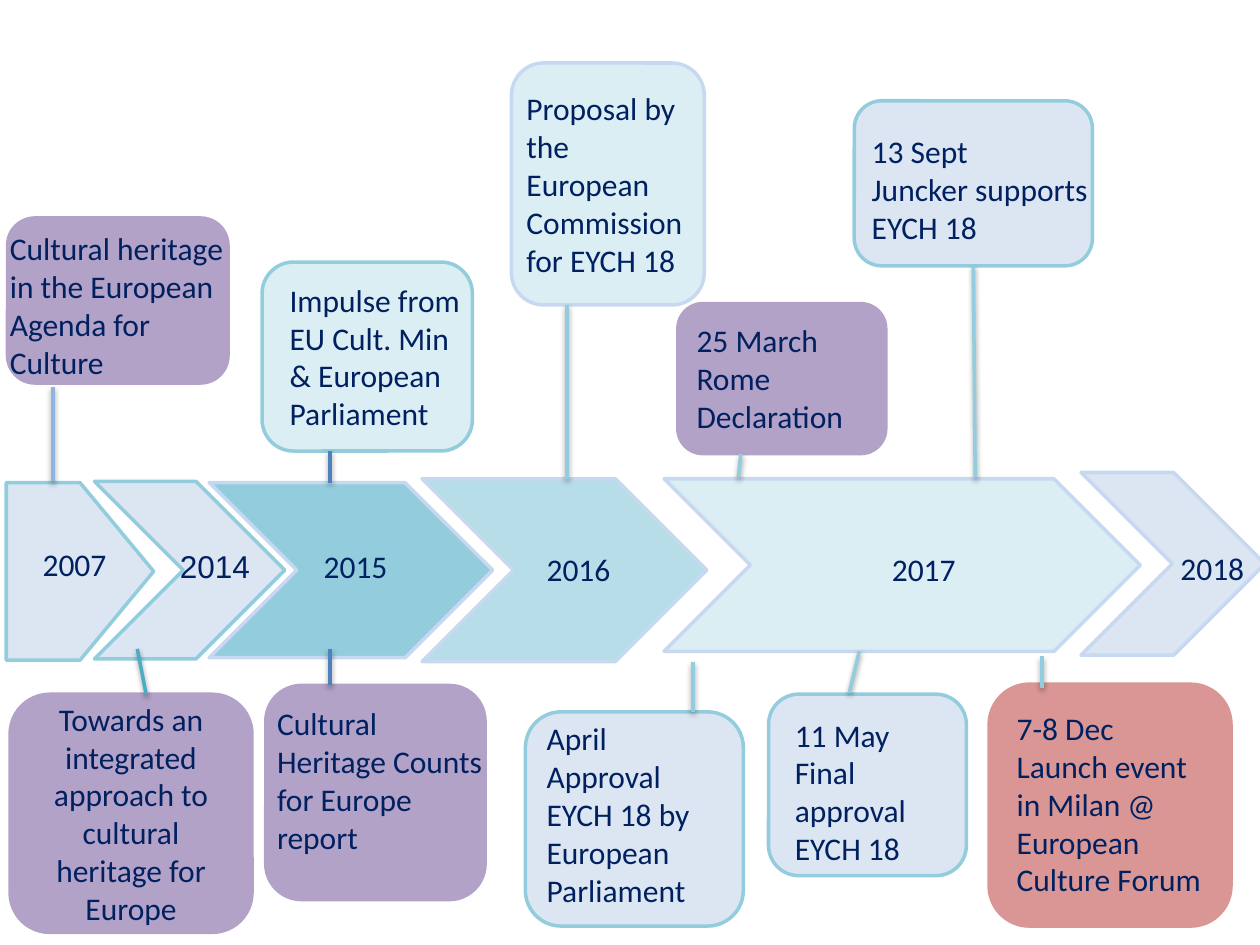
from dataclasses import dataclass

from lxml import etree
from pptx import Presentation
from pptx import util as u
from pptx.dml.color import RGBColor
from pptx.enum import shapes, text
from pptx.oxml import ns


@dataclass(frozen=True)
class Theme:
    font: str = "Calibri"
    alternate_font: str = "Arial"
    size: int = 18
    line_width: int = 2
    ink: str = "002060"
    purple: str = "B3A2C7"
    red: str = "D99694"
    pale_blue: str = "DCE6F2"
    pale_aqua: str = "DBEEF4"
    light_aqua: str = "B7DEE8"
    aqua: str = "93CDDD"
    deep_aqua: str = "4BACC6"
    ice: str = "C6D9F1"
    sky: str = "8EB4E3"
    blue: str = "4F81BD"


THEME = Theme()
SHAPE = shapes.MSO_SHAPE

# Arrows: preset, box, fill, line
ARROWS = [
    (SHAPE.PENTAGON, (0.05, 3.83, 1.17, 1.41), THEME.pale_blue, THEME.aqua),
    (SHAPE.CHEVRON, (0.75, 3.82, 1.51, 1.41), THEME.pale_blue, THEME.aqua),
    (SHAPE.CHEVRON, (1.66, 3.83, 2.25, 1.39), THEME.aqua, THEME.ice),
    (SHAPE.CHEVRON, (3.35, 3.8, 2.26, 1.45), THEME.light_aqua, THEME.ice),
    (SHAPE.CHEVRON, (5.27, 3.8, 3.78, 1.37), THEME.pale_aqua, THEME.ice),
    (SHAPE.CHEVRON, (8.58, 3.75, 1.46, 1.45), THEME.pale_blue, THEME.ice),
]

# Year labels: year, left, top, width, font
YEARS = [
    ("2007", 0.24, 4.28, 0.83, THEME.font),
    ("2014", 1.33, 4.29, 0.83, THEME.alternate_font),
    ("2015", 2.47, 4.29, 0.78, THEME.font),
    ("2016", 4.24, 4.32, 0.8, THEME.font),
    ("2017", 6.98, 4.32, 1.11, THEME.font),
    ("2018", 9.27, 4.31, 1, THEME.font),
]

# Event cards: card box, fill, line, text box (None: text inside the card),
# paragraphs, connector start and end, connector colour
EVENTS = [
    ((0.06, 1.73, 1.75, 1.31), THEME.purple, THEME.purple, (-0.02, 1.77, 2, 1.31),
     ["Cultural heritage in the European Agenda for Culture"],
     (0.42, 3.07), (0.42, 3.82), THEME.sky),
    ((0.08, 5.51, 1.92, 1.89), THEME.purple, THEME.purple, None,
     ["Towards an integrated approach to cultural heritage for Europe"],
     (1.09, 5.15), (1.16, 5.51), THEME.deep_aqua),
    ((2.08, 2.08, 1.67, 1.5), THEME.pale_aqua, THEME.aqua, (2.2, 2.18, 1.58, 1.31),
     ["Impulse from EU Cult. Min & European Parliament"],
     (2.62, 3.58), (2.62, 3.83), THEME.blue),
    ((2.11, 5.44, 1.74, 1.7), THEME.purple, THEME.purple, (2.1, 5.54, 1.91, 1.31),
     ["Cultural Heritage Counts for Europe report"],
     (2.62, 5.15), (2.62, 5.44), THEME.blue),
    ((4.06, 0.5, 1.53, 1.92), THEME.pale_aqua, THEME.ice, (4.08, 0.66, 1.53, 1.62),
     ["Proposal by the European Commission for EYCH 18"],
     (4.5, 2.42), (4.5, 3.8), THEME.aqua),
    ((4.17, 5.65, 1.73, 1.7), THEME.pale_blue, THEME.aqua, (4.24, 5.66, 1.64, 1.62),
     ["April", "Approval EYCH 18 by European Parliament"],
     (5.5, 5.25), (5.5, 5.65), THEME.aqua),
    ((5.38, 2.41, 1.65, 1.19), THEME.purple, THEME.purple, (5.43, 2.5, 1.46, 1.01),
     ["25 March Rome Declaration"],
     (5.88, 3.6), (5.86, 3.79), THEME.aqua),
    ((6.1, 5.51, 1.57, 1.44), THEME.pale_blue, THEME.aqua, (6.21, 5.63, 1.53, 1.31),
     ["11 May", "Final approval EYCH 18"],
     (6.82, 5.17), (6.74, 5.5), THEME.aqua),
    ((6.78, 0.8, 1.89, 1.31), THEME.pale_blue, THEME.aqua, (6.82, 1, 2.02, 1.04),
     ["13 Sept", "Juncker supports EYCH 18"],
     (7.72, 2.11), (7.74, 3.79), THEME.aqua),
    ((7.85, 5.43, 1.92, 1.92), THEME.red, THEME.red, (7.97, 5.58, 1.69, 1.62),
     ["7-8 Dec", "Launch event in Milan @ European Culture Forum"],
     (8.27, 5.21), (8.27, 5.46), THEME.aqua),
]


def inches(values):
    return [u.Inches(value) for value in values]


def add_block(slide, preset, box, fill, line):
    shape = slide.shapes.add_shape(preset, *inches(box))
    shape.shadow.inherit = False
    shape.fill.solid()
    shape.fill.fore_color.rgb = RGBColor.from_string(fill)
    shape.line.color.rgb = RGBColor.from_string(line)
    shape.line.width = u.Pt(THEME.line_width)
    return shape


def write_text(frame, paragraphs, align, font=THEME.font):
    frame.word_wrap = True
    for index, words in enumerate(paragraphs):
        paragraph = frame.paragraphs[0] if index == 0 else frame.add_paragraph()
        paragraph.alignment = align
        run = paragraph.add_run()
        run.text = words
        run.font.name = font
        run.font.size = u.Pt(THEME.size)
        run.font.color.rgb = RGBColor.from_string(THEME.ink)


def add_label(slide, box, paragraphs, font=THEME.font):
    frame = slide.shapes.add_textbox(*inches(box)).text_frame
    write_text(frame, paragraphs, text.PP_ALIGN.LEFT, font)
    frame.auto_size = text.MSO_AUTO_SIZE.SHAPE_TO_FIT_TEXT


def add_card(slide, box, fill, line, text_box, paragraphs):
    card = add_block(slide, SHAPE.ROUNDED_RECTANGLE, box, fill, line)
    if text_box:
        add_label(slide, text_box, paragraphs)
    else:
        card.text_frame.vertical_anchor = text.MSO_ANCHOR.MIDDLE
        write_text(card.text_frame, paragraphs, text.PP_ALIGN.CENTER)
    return card


def add_link(slide, start, end, colour):
    link = slide.shapes.add_connector(
        shapes.MSO_CONNECTOR.STRAIGHT, *inches(start + end))
    link.line.color.rgb = RGBColor.from_string(colour)
    link.line.width = u.Pt(THEME.line_width)
    # Soft shadow straight below the line
    effects = etree.SubElement(link._element.spPr, ns.qn("a:effectLst"))
    shadow = etree.SubElement(
        effects, ns.qn("a:outerShdw"), blurRad=str(u.Pt(3.1)),
        dist=str(u.Pt(1.6)), dir="5400000", rotWithShape="0")
    black = etree.SubElement(shadow, ns.qn("a:srgbClr"), val="000000")
    etree.SubElement(black, ns.qn("a:alpha"), val="38000")
    return link


def starts_below_middle(box, start):
    left, top, width, height = box
    return (abs(left + width / 2 - start[0]) < 0.02
            and abs(top + height - start[1]) < 0.02)


def main():
    presentation = Presentation()
    presentation.slide_width, presentation.slide_height = inches((10, 7.5))
    slide = presentation.slides.add_slide(presentation.slide_layouts[6])

    # Timeline band
    for arrow in ARROWS:
        add_block(slide, *arrow)
    for year, left, top, width, font in YEARS:
        add_label(slide, (left, top, width, 0.4), [year], font)

    # Events above and below the band
    cards = [add_card(slide, *event[:5]) for event in EVENTS]
    for card, event in zip(cards, EVENTS):
        start, end, colour = event[5:]
        link = add_link(slide, start, end, colour)
        if starts_below_middle(event[0], start):
            link.begin_connect(card, 2)

    presentation.save("out.pptx")


if __name__ == "__main__":
    main()
